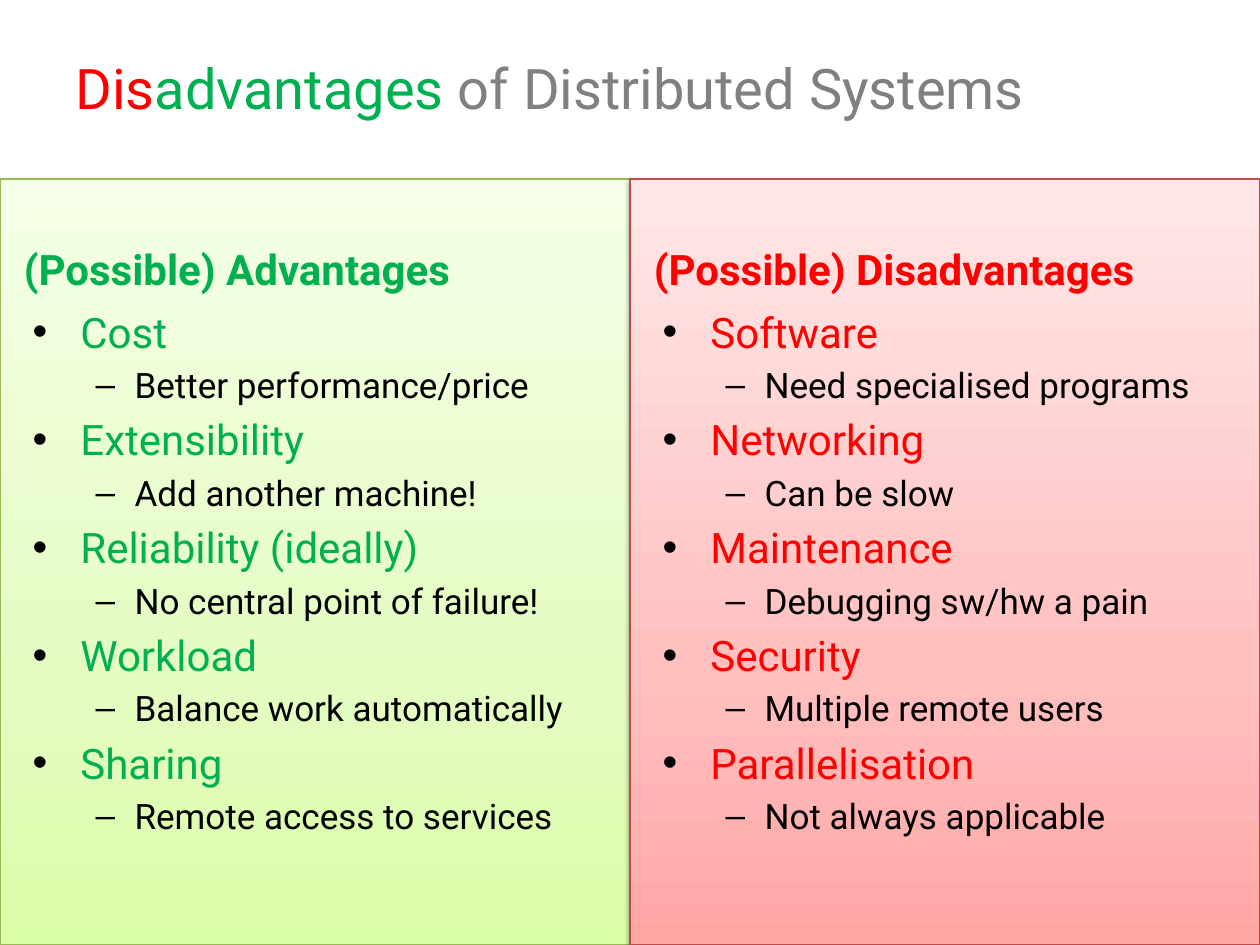
from lxml import etree
from pptx import Presentation
from pptx.dml.color import RGBColor
from pptx.enum import shapes, text
from pptx.oxml import parse_xml
from pptx.oxml.ns import nsdecls, qn
from pptx.util import Inches, Pt

COLORS = {
    "green": "00B050", "red": "FF0000", "gray": "808080", "black": "000000",
    "green line": "98B955", "red line": "BF4C48",
}
FONT = "Roboto"
TITLE = [("Dis", "red"), ("advantages", "green"), (" of Distributed Systems", "gray")]
COLUMNS = [
    {
        "heading": "(Possible) Advantages", "color": "green", "line": "green line",
        "gradient": [(0, "DAFDA7"), (35, "E4FCC2"), (100, "F5FFE7")],
        "items": [
            ("Cost", "Better performance/price"),
            ("Extensibility", "Add another machine!"),
            ("Reliability (ideally)", "No central point of failure!"),
            ("Workload", "Balance work automatically"),
            ("Sharing", "Remote access to services"),
        ],
    },
    {
        "heading": "(Possible) Disadvantages", "color": "red", "line": "red line",
        "gradient": [(0, "FFA6A5"), (35, "FFC0BF"), (100, "FFE7E7")],
        "items": [
            ("Software", "Need specialised programs"),
            ("Networking", "Can be slow"),
            ("Maintenance", "Debugging sw/hw a pain"),
            ("Security", "Multiple remote users"),
            ("Parallelisation", "Not always applicable"),
        ],
    },
]
LEVELS = [
    {"size": 24, "bullet": "•", "margin": 0.38, "indent": -0.38},
    {"size": 20, "bullet": "–", "margin": 0.81, "indent": -0.31},
]
COLUMN_WIDTH, PANEL_TOP, PANEL_HEIGHT = 5, 1.42, 6.08
TEXT_WIDTH = 4.42


def add_panel(slide, left, column):
    shape = slide.shapes.add_shape(
        shapes.MSO_SHAPE.RECTANGLE, Inches(left), Inches(PANEL_TOP),
        Inches(COLUMN_WIDTH), Inches(PANEL_HEIGHT))
    shape.fill.gradient()
    shape.fill.gradient_angle = 90
    stops = shape._element.spPr.find(".//" + qn("a:gsLst"))
    for stop in list(stops):
        stops.remove(stop)
    for position, color in column["gradient"]:
        stop = etree.SubElement(stops, qn("a:gs"), pos=str(position * 1000))
        etree.SubElement(stop, qn("a:srgbClr"), val=color)
    shape.line.color.rgb = RGBColor.from_string(COLORS[column["line"]])
    shape.line.width = Pt(0.75)
    shape.shadow.inherit = False
    shape._element.spPr.find(qn("a:effectLst")).append(parse_xml(
        f'<a:outerShdw {nsdecls("a")} blurRad="{Pt(3.1)}" dist="{Pt(1.6)}" '
        f'dir="5400000" rotWithShape="0"><a:srgbClr val="{COLORS["black"]}">'
        '<a:alpha val="38000"/></a:srgbClr></a:outerShdw>'))


def add_text_frame(slide, left, top, width, height, anchor):
    box = slide.shapes.add_textbox(*map(Inches, (left, top, width, height)))
    box.text_frame.word_wrap = True
    box.text_frame.vertical_anchor = anchor
    return box.text_frame


def add_run(paragraph, wording, color, size, bold=False):
    run = paragraph.add_run()
    run.text = wording
    for name, value in {"name": FONT, "size": Pt(size), "bold": bold}.items():
        setattr(run.font, name, value)
    run.font.color.rgb = RGBColor.from_string(COLORS[color])


def add_space_before(paragraph):
    properties = paragraph._p.get_or_add_pPr()
    space = etree.SubElement(properties, qn("a:spcBef"))
    etree.SubElement(space, qn("a:spcPct"), val="20000")
    return properties


def add_bullet(paragraph, level):
    paragraph.level = level
    style = LEVELS[level]
    properties = add_space_before(paragraph)
    properties.set("marL", str(Inches(style["margin"])))
    properties.set("indent", str(Inches(style["indent"])))
    color = etree.SubElement(properties, qn("a:buClr"))
    etree.SubElement(color, qn("a:srgbClr"), val=COLORS["black"])
    etree.SubElement(properties, qn("a:buFont"), typeface="Arial")
    etree.SubElement(properties, qn("a:buChar"), char=style["bullet"])


def add_column_text(slide, left, column):
    heading = add_text_frame(
        slide, left + 0.09, 1.68, TEXT_WIDTH, 0.7, text.MSO_ANCHOR.BOTTOM).paragraphs[0]
    add_space_before(heading)
    add_run(heading, column["heading"], column["color"], 24, True)

    frame = add_text_frame(
        slide, left + 0.16, 2.38, TEXT_WIDTH, 4.32, text.MSO_ANCHOR.TOP)
    paragraph = frame.paragraphs[0]
    for index, item in enumerate(column["items"]):
        for level, wording in enumerate(item):
            if index or level:
                paragraph = frame.add_paragraph()
            add_bullet(paragraph, level)
            color = "black" if level else column["color"]
            add_run(paragraph, wording, color, LEVELS[level]["size"])


def main():
    presentation = Presentation()
    presentation.slide_width, presentation.slide_height = Inches(10), Inches(7.5)
    slide = presentation.slides.add_slide(presentation.slide_layouts[6])
    for index, column in enumerate(COLUMNS):
        add_panel(slide, index * COLUMN_WIDTH, column)
    title = add_text_frame(slide, 0.5, 0.3, 9, 0.78, text.MSO_ANCHOR.MIDDLE).paragraphs[0]
    for wording, color in TITLE:
        add_run(title, wording, color, 32)
    for index, column in enumerate(COLUMNS):
        add_column_text(slide, index * COLUMN_WIDTH, column)
    presentation.save("out.pptx")


if __name__ == "__main__":
    main()
